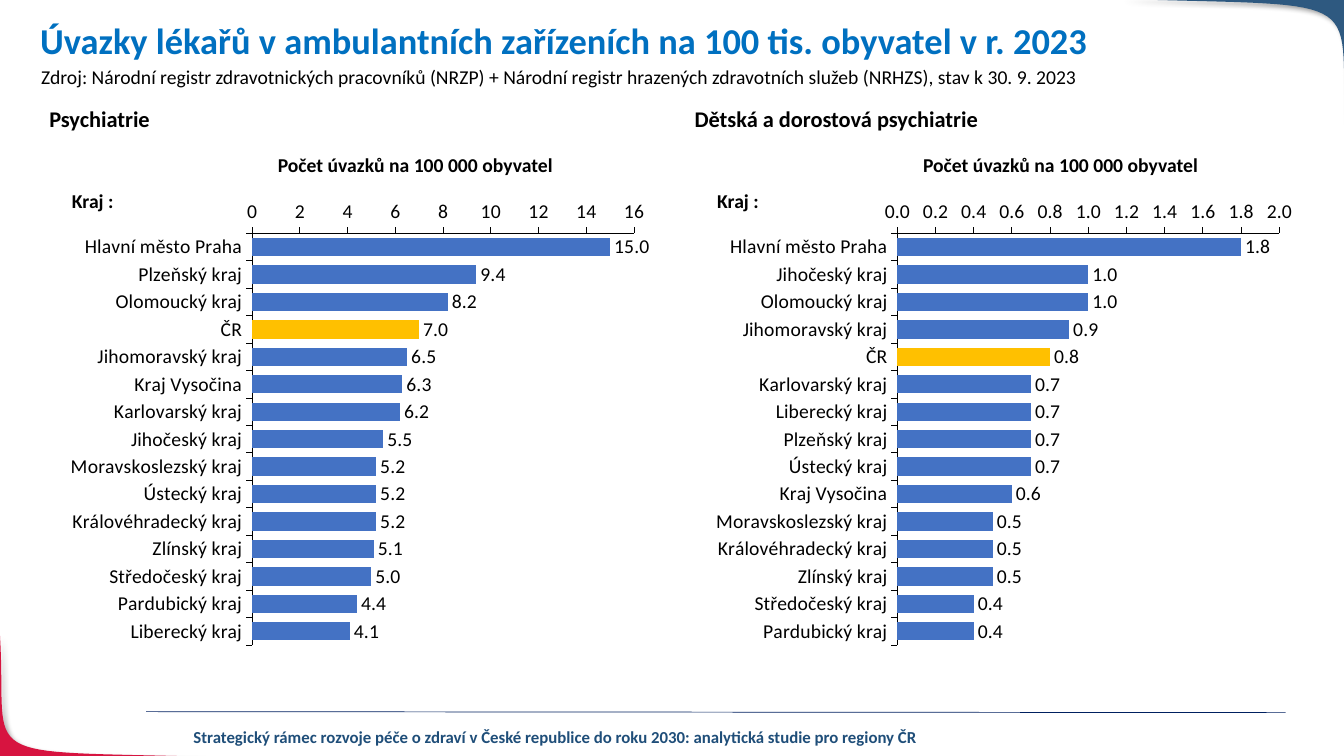
from lxml import etree
from pptx import Presentation
from pptx.chart.data import CategoryChartData
from pptx.dml.color import RGBColor
from pptx.enum.chart import XL_CHART_TYPE, XL_LABEL_POSITION, XL_TICK_MARK
from pptx.enum.shapes import MSO_CONNECTOR
from pptx.enum.text import MSO_AUTO_SIZE, PP_ALIGN
from pptx.oxml import parse_xml
from pptx.oxml.ns import nsdecls, qn
from pptx.util import Inches, Pt

BARS = XL_CHART_TYPE.BAR_CLUSTERED
OUT_END = XL_LABEL_POSITION.OUTSIDE_END
TICK_OUT, TICK_NONE = XL_TICK_MARK.OUTSIDE, XL_TICK_MARK.NONE
STRAIGHT = MSO_CONNECTOR.STRAIGHT
LEFT, CENTER = PP_ALIGN.LEFT, PP_ALIGN.CENTER
GROW, FIXED = MSO_AUTO_SIZE.SHAPE_TO_FIT_TEXT, MSO_AUTO_SIZE.NONE

BLACK = RGBColor(0x00, 0x00, 0x00)
RED = RGBColor(0xD7, 0x14, 0x40)
STEEL = RGBColor(0x2E, 0x59, 0x80)
NAVY = RGBColor(0x00, 0x20, 0x60)
INK = RGBColor(0x1F, 0x4E, 0x79)
TITLE = RGBColor(0x00, 0x70, 0xC0)
BLUE = RGBColor(0x44, 0x72, 0xC4)
GOLD = RGBColor(0xFF, 0xC0, 0x00)

NATION = "ČR"
PLOT = {"x": 0.341, "y": 0.156, "w": 0.612, "h": 0.822}

ADULT = [
    ("Hlavní město Praha", 15.0), ("Plzeňský kraj", 9.4),
    ("Olomoucký kraj", 8.2), (NATION, 7.0), ("Jihomoravský kraj", 6.5),
    ("Kraj Vysočina", 6.3), ("Karlovarský kraj", 6.2),
    ("Jihočeský kraj", 5.5), ("Moravskoslezský kraj", 5.2),
    ("Ústecký kraj", 5.2), ("Královéhradecký kraj", 5.2),
    ("Zlínský kraj", 5.1), ("Středočeský kraj", 5.0),
    ("Pardubický kraj", 4.4), ("Liberecký kraj", 4.1),
]
CHILD = [
    ("Hlavní město Praha", 1.8), ("Jihočeský kraj", 1.0),
    ("Olomoucký kraj", 1.0), ("Jihomoravský kraj", 0.9), (NATION, 0.8),
    ("Karlovarský kraj", 0.7), ("Liberecký kraj", 0.7),
    ("Plzeňský kraj", 0.7), ("Ústecký kraj", 0.7), ("Kraj Vysočina", 0.6),
    ("Moravskoslezský kraj", 0.5), ("Královéhradecký kraj", 0.5),
    ("Zlínský kraj", 0.5), ("Středočeský kraj", 0.4),
    ("Pardubický kraj", 0.4),
]


def bezier(ends, steps=32):
    """Return points along a cubic curve given by its four control points."""
    curve = []
    for i in range(steps + 1):
        t = i / steps
        u = 1 - t
        parts = (u ** 3, 3 * u * u * t, 3 * u * t * t, t ** 3)
        curve.append(tuple(sum(k * p[n] for k, p in zip(parts, ends))
                           for n in (0, 1)))
    return curve


class Board:
    font = "Calibri"

    def __init__(self, deck):
        self.slide = deck.slides.add_slide(deck.slide_layouts[6])
        self.shapes = self.slide.shapes

    def text(self, words, left, top, width, height, size, color=BLACK,
             bold=True, align=LEFT, wrap=True, fit=GROW, space=None):
        box = self.shapes.add_textbox(Inches(left), Inches(top),
                                      Inches(width), Inches(height))
        frame = box.text_frame
        frame.word_wrap = wrap
        frame.auto_size = fit
        para = frame.paragraphs[0]
        para.alignment = align
        if space:
            para.line_spacing = space
        run = para.add_run()
        run.text = words
        run.font.name = self.font
        run.font.size = Pt(size)
        run.font.bold = bold
        run.font.color.rgb = color

    def corner(self, ends, tip, color):
        """Fill the area between a curve and the slide corner at tip."""
        dots = [(Inches(x), Inches(y)) for x, y in bezier(ends) + [tip]]
        maker = self.shapes.build_freeform(*dots[0])
        maker.add_line_segments(dots[1:], close=True)
        shape = maker.convert_to_shape()
        shape.fill.solid()
        shape.fill.fore_color.rgb = color
        shape.line.fill.background()
        shape.element.spPr.append(parse_xml(
            f'<a:effectLst {nsdecls("a")}><a:outerShdw blurRad="{Pt(4)}" '
            f'dist="{Pt(3)}" dir="2700000" algn="tl" rotWithShape="0">'
            '<a:srgbClr val="000000"><a:alpha val="40000"/></a:srgbClr>'
            '</a:outerShdw></a:effectLst>'))

    def rule(self, x1, y1, x2, y2, color, width):
        line = self.shapes.add_connector(STRAIGHT, Inches(x1), Inches(y1),
                                         Inches(x2), Inches(y2))
        line.line.color.rgb = color
        line.line.width = Pt(width)
        etree.SubElement(line.element.spPr, qn("a:effectLst"))

    def axis(self, axis):
        axis.has_major_gridlines = False
        axis.major_tick_mark = TICK_OUT
        axis.minor_tick_mark = TICK_NONE
        axis.format.line.color.rgb = BLACK
        axis.format.line.width = Pt(0.75)

    def chart(self, rows, left, top, width, height, peak, step, form):
        data = CategoryChartData()
        data.categories = [name for name, _ in rows]
        data.add_series("Series 1", [value for _, value in rows])
        data.add_series("Series 2", [value if name == NATION else None
                                     for name, value in rows])
        chart = self.shapes.add_chart(
            BARS, Inches(left), Inches(top), Inches(width), Inches(height),
            data).chart
        chart.has_legend = False
        chart.has_title = False
        chart.font.name = self.font
        chart.font.size = Pt(14)
        chart.font.color.rgb = BLACK
        self.axis(chart.category_axis)
        self.axis(chart.value_axis)
        chart.category_axis.reverse_order = True
        scale = chart.value_axis
        scale.minimum_scale, scale.maximum_scale = 0, peak
        scale.major_unit = step
        scale.tick_labels.number_format = form
        scale.tick_labels.number_format_is_linked = False
        plot = chart.plots[0]
        plot.vary_by_categories = False
        plot.gap_width, plot.overlap = 50, 100
        for series, color in zip(plot.series, (BLUE, GOLD)):
            series.format.fill.solid()
            series.format.fill.fore_color.rgb = color
        labels = plot.series[0].data_labels
        labels.show_value = True
        labels.number_format = "#,##0.0"
        labels.number_format_is_linked = False
        labels.position = OUT_END
        self.place(chart)

    def place(self, chart):
        """Fix the inner plot area inside the chart frame."""
        area = chart.element.find(".//" + qn("c:plotArea")) \
            if hasattr(chart, "element") \
            else chart._chartSpace.find(".//" + qn("c:plotArea"))
        for old in area.findall(qn("c:layout")):
            area.remove(old)
        modes = '<c:xMode val="edge"/><c:yMode val="edge"/>'
        sizes = "".join(f'<c:{k} val="{v}"/>' for k, v in PLOT.items())
        area.insert(0, parse_xml(
            f'<c:layout {nsdecls("c")}><c:manualLayout>'
            f'<c:layoutTarget val="inner"/>{modes}{sizes}'
            '</c:manualLayout></c:layout>'))

    def panel(self, left, head, rows, peak, step, form):
        self.chart(rows, left, 1.54, 6.19, 4.97, peak, step, form)
        self.text(head, left, 0.99, 6.19, 0.37, 16)
        self.text("Počet úvazků na 100 000 obyvatel", left + 1.58, 1.47,
                  4.3, 0.34, 14, align=CENTER)
        self.text("Kraj :", left + 0.22, 1.83, 0.62, 0.34, 14,
                  align=CENTER, wrap=False)


def main():
    deck = Presentation()
    deck.slide_width, deck.slide_height = Inches(13.33), Inches(7.5)
    board = Board(deck)
    board.corner([(2.13, 7.51), (-0.34, 7.44), (0.08, 7.59), (0, 6.3)],
                 (-0.01, 7.51), RED)
    board.corner([(11.11, -0.01), (13.7, 0.07), (13.26, -0.1),
                  (13.35, 1.42)], (13.35, -0.01), STEEL)
    board.rule(1.45, 7.06, 12.75, 7.07, NAVY, 0.5)
    board.text("Strategický rámec rozvoje péče o zdraví v České republice "
               "do roku 2030: analytická studie pro regiony ČR",
               1.01, 7.16, 9, 0.3, 12, INK, align=CENTER)
    board.text("Úvazky lékařů v ambulantních zařízeních na 100 tis. "
               "obyvatel v r. 2023", 0.3, 0.18, 11.5, 0.59, 26, TITLE,
               fit=FIXED, space=0.9)
    board.text("Zdroj: Národní registr zdravotnických pracovníků (NRZP) + "
               "Národní registr hrazených zdravotních služeb (NRHZS), "
               "stav k 30. 9. 2023", 0.31, 0.59, 12.73, 0.34, 14, bold=False)
    board.panel(0.39, "Psychiatrie", ADULT, 16, 2, "#,##0")
    board.panel(6.79, "Dětská a dorostová psychiatrie", CHILD, 2, 0.2,
                "#,##0.0")
    deck.save("out.pptx")


if __name__ == "__main__":
    main()
